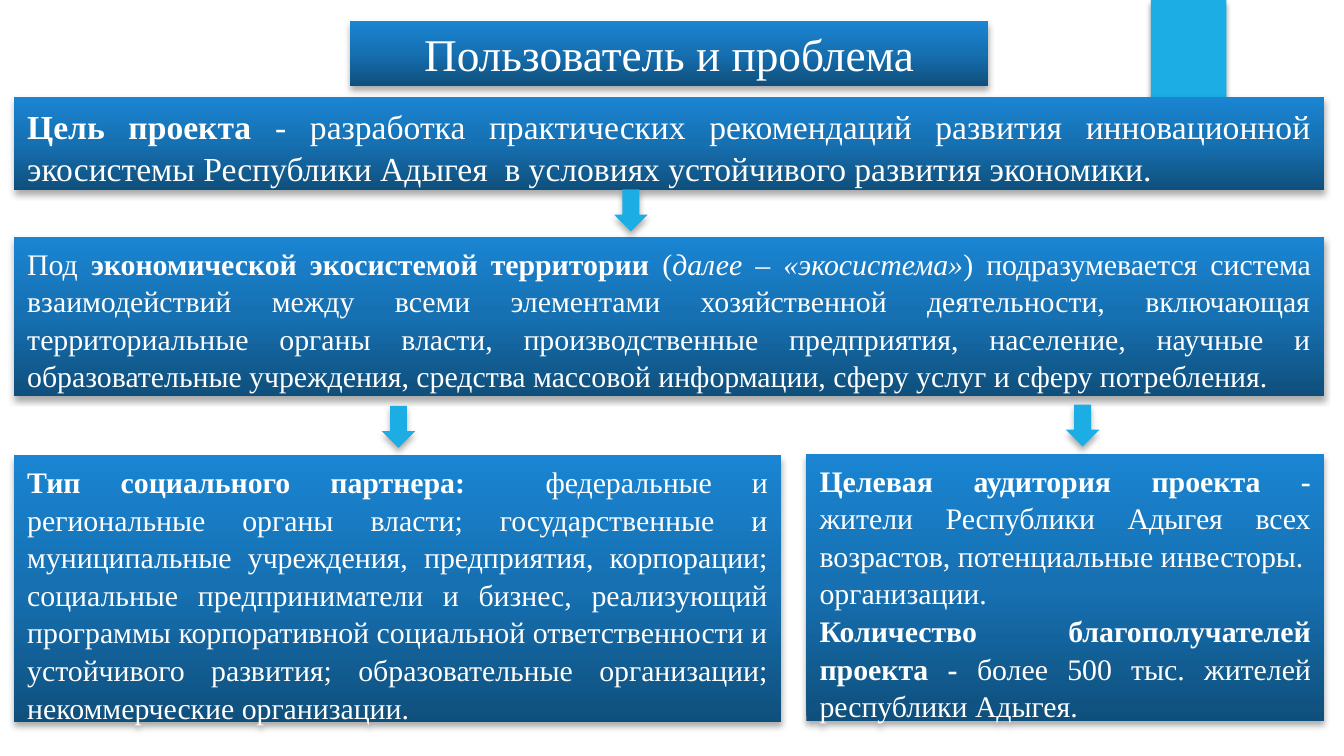
from dataclasses import dataclass

from lxml import etree
from pptx import Presentation
from pptx.dml.color import RGBColor
from pptx.enum.shapes import MSO_SHAPE
from pptx.enum.text import MSO_ANCHOR, MSO_AUTO_SIZE, PP_ALIGN
from pptx.oxml.ns import qn
from pptx.util import Pt

RECTANGLE, DOWN_ARROW = MSO_SHAPE.RECTANGLE, MSO_SHAPE.DOWN_ARROW
TOP, MIDDLE = MSO_ANCHOR.TOP, MSO_ANCHOR.MIDDLE
CENTER, JUSTIFY = PP_ALIGN.CENTER, PP_ALIGN.JUSTIFY
TITLE_ONLY = 5


@dataclass(frozen=True)
class Theme:
    font: str = "Times New Roman"
    text: RGBColor = RGBColor(0xFF, 0xFF, 0xFF)
    accent: RGBColor = RGBColor(0x1C, 0xAD, 0xE4)
    gradient: tuple = ((0, "0F4F7C"), (50, "1670B1"), (100, "1A85D2"))
    title_size: float = 24.3
    goal_size: float = 18
    body_size: float = 16
    line_spacing: float = 1.05
    # Opacity in percent, then blur and distance in points
    panel_shadow: tuple = (32, 3.5, 2.2)
    ribbon_shadow: tuple = (45, 3, 2)


THEME = Theme()

# Each run is (text, style), where the style is "", "b" or "i"
GOAL = [[
    ("Цель проекта ", "b"),
    ("- разработка практических рекомендаций развития инновационной экосистемы "
     "Республики Адыгея  в условиях устойчивого развития экономики.", ""),
]]
DEFINITION = [[
    ("Под ", ""),
    ("экономической экосистемой территории ", "b"),
    ("(", ""),
    ("далее – «экосистема»", "i"),
    (") подразумевается система взаимодействий между всеми элементами "
     "хозяйственной деятельности, включающая территориальные органы власти, "
     "производственные предприятия, население, научные и образовательные "
     "учреждения, средства массовой информации, сферу услуг и сферу потребления.", ""),
]]
PARTNERS = [[
    ("Тип социального партнера:  ", "b"),
    ("федеральные и региональные органы власти; государственные и муниципальные "
     "учреждения, предприятия, корпорации; социальные предприниматели и бизнес, "
     "реализующий программы корпоративной социальной ответственности и устойчивого "
     "развития; образовательные организации; некоммерческие организации.", ""),
]]
AUDIENCE = [
    [("Целевая аудитория проекта - ", "b"),
     ("жители Республики Адыгея всех возрастов, потенциальные инвесторы.", "")],
    [("организации.", "")],
    [("Количество благополучателей проекта - ", "b"),
     ("более 500 тыс. жителей республики Адыгея.", "")],
]


def place(shape, box):
    shape.left, shape.top, shape.width, shape.height = (Pt(length) for length in box)


def add_shadow(shape, shadow):
    opacity, blur, distance = shadow
    shape.shadow.inherit = False
    effects = shape._element.spPr.find(qn("a:effectLst"))
    outer = etree.SubElement(
        effects, qn("a:outerShdw"), blurRad=str(Pt(blur)), dist=str(Pt(distance)),
        dir="5400000", algn="ctr", rotWithShape="0")
    color = etree.SubElement(outer, qn("a:srgbClr"), val="000000")
    etree.SubElement(color, qn("a:alpha"), val=str(opacity * 1000))


def style_panel(shape):
    """Give a shape the blue gradient, no outline and a soft shadow."""
    gradient = etree.SubElement(shape._element.spPr, qn("a:gradFill"), rotWithShape="1")
    stops = etree.SubElement(gradient, qn("a:gsLst"))
    for position, color in THEME.gradient:
        stop = etree.SubElement(stops, qn("a:gs"), pos=str(position * 1000))
        etree.SubElement(stop, qn("a:srgbClr"), val=color)
    etree.SubElement(gradient, qn("a:lin"), ang="16200000", scaled="0")
    shape.line.fill.background()
    add_shadow(shape, THEME.panel_shadow)


def style_paragraph(paragraph, size, alignment):
    paragraph.alignment = alignment
    paragraph.font.name = THEME.font
    paragraph.font.size = Pt(size)
    paragraph.font.color.rgb = THEME.text


def add_accent(slide, kind, box, shadow):
    shape = slide.shapes.add_shape(kind, *(Pt(length) for length in box))
    shape.fill.solid()
    shape.fill.fore_color.rgb = THEME.accent
    shape.line.fill.background()
    add_shadow(shape, shadow)


def add_title(slide, box, text):
    title = slide.shapes.title
    place(title, box)
    style_panel(title)
    frame = title.text_frame
    frame.text = text
    frame.auto_size = MSO_AUTO_SIZE.NONE
    frame.vertical_anchor = MIDDLE
    style_paragraph(frame.paragraphs[0], THEME.title_size, CENTER)


def add_panel(slide, box, paragraphs, size):
    panel = slide.shapes.add_shape(RECTANGLE, *(Pt(length) for length in box))
    style_panel(panel)
    frame = panel.text_frame
    frame.word_wrap = True
    frame.vertical_anchor = TOP
    for index, runs in enumerate(paragraphs):
        paragraph = frame.add_paragraph() if index else frame.paragraphs[0]
        style_paragraph(paragraph, size, JUSTIFY)
        paragraph.line_spacing = THEME.line_spacing
        for text, style in runs:
            run = paragraph.add_run()
            run.text = text
            if style:
                run.font.bold = style == "b"
                run.font.italic = style == "i"


def add_arrow(slide, center, top):
    width, height = 18, 22.5
    add_accent(slide, DOWN_ARROW, (center - width / 2, top, width, height),
               THEME.panel_shadow)


def build_slide(presentation):
    slide = presentation.slides.add_slide(presentation.slide_layouts[TITLE_ONLY])
    left, width = 7.5, 702
    add_accent(slide, RECTANGLE, (616.5, 0, 40.5, 67.5), THEME.ribbon_shadow)
    add_title(slide, (187.5, 11, 342, 35), "Пользователь и проблема")
    add_panel(slide, (left, 52, width, 50), GOAL, THEME.goal_size)
    add_panel(slide, (left, 127, width, 85), DEFINITION, THEME.body_size)
    add_panel(slide, (left, 244, 411, 143), PARTNERS, THEME.body_size)
    add_panel(slide, (432, 243.25, 277.5, 143), AUDIENCE, THEME.body_size)
    for center, top in ((338, 101.5), (213.5, 217.5), (580, 216.75)):
        add_arrow(slide, center, top)


def main():
    presentation = Presentation()
    presentation.slide_width, presentation.slide_height = Pt(720), Pt(405)
    build_slide(presentation)
    presentation.save("out.pptx")


if __name__ == "__main__":
    main()
